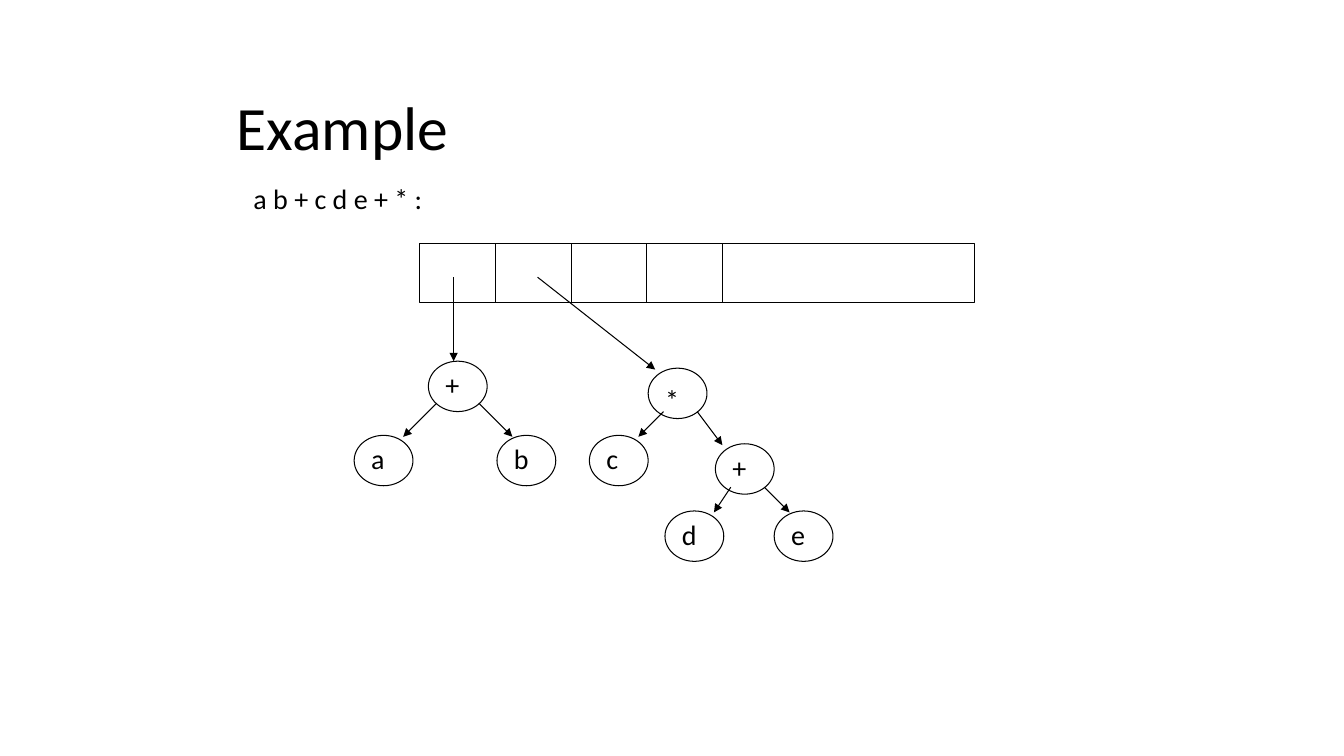
from pptx import Presentation
from pptx.util import Pt
from pptx.dml.color import RGBColor as RGB
from pptx.enum.shapes import MSO_SHAPE as Shape, MSO_CONNECTOR as Conn
from pptx.enum.text import MSO_ANCHOR as Anchor
from pptx.oxml.ns import qn
from lxml.etree import SubElement as Sub
from dataclasses import dataclass


@dataclass
class Theme:
    font: str = "Calibri"
    ink: RGB = RGB(0, 0, 0)
    title: int = 44
    body: int = 20
    line: float = 0.75


theme = Theme()
deck = Presentation()
deck.slide_width, deck.slide_height = Pt(960), Pt(540)
slide = deck.slides.add_slide(deck.slide_layouts[6])
shapes = slide.shapes


def write(text, left, top, wide, high, size=theme.body, wrap=False, anchor=Anchor.TOP, space=1.0):
    frame = shapes.add_textbox(Pt(left), Pt(top), Pt(wide), Pt(high)).text_frame
    frame.word_wrap = wrap
    frame.vertical_anchor = anchor
    para = frame.paragraphs[0]
    para.line_spacing = space
    run = para.add_run()
    run.text = text
    run.font.name = theme.font
    run.font.size = Pt(size)
    run.font.color.rgb = theme.ink


def link(start, end, arrow=True):
    line = shapes.add_connector(Conn.STRAIGHT, *map(Pt, start + end))
    line.line.color.rgb = theme.ink
    line.line.width = Pt(theme.line)
    if arrow:
        Sub(line.line._get_or_add_ln(), qn("a:tailEnd"), type="triangle")
    Sub(line._element.spPr, qn("a:effectLst"))


write("Example", 162, 48, 612, 90, size=theme.title, wrap=True, anchor=Anchor.MIDDLE, space=0.9)
write("a b + c d e + * :", 174, 126, 144, 31)

left, top, cell, high = 300, 174, 54, 42
nodes = [
    ("+", 306, 258), ("a", 253, 311), ("b", 355, 311),
    ("*", 463, 263), ("c", 421, 311), ("+", 511, 317),
    ("d", 475, 365), ("e", 553, 365),
]
outlines = [(Shape.RECTANGLE, left, top, 396, high)]
outlines += [(Shape.OVAL, x, y, 42, 36) for _, x, y in nodes]
for kind, *box in outlines:
    shape = shapes.add_shape(kind, *map(Pt, box))
    shape.shadow.inherit = False
    shape.fill.background()
    shape.line.color.rgb = theme.ink
    shape.line.width = Pt(theme.line)

for i in range(1, 5):
    x = left + i * cell
    link((x, top), (x, top + high), arrow=False)

for text, x, y in nodes:
    drop = 7 if text == "*" else 1
    write(text, x + 5, y + drop, 25, 31)

arrows = [
    ((324, 198), (324, 258)), ((384, 198), (468, 264)),
    ((312, 288), (288, 312)), ((342, 288), (366, 312)),
    ((474, 294), (456, 312)), ((498, 294), (516, 318)),
    ((522, 348), (510, 366)), ((546, 348), (564, 366)),
]
for start, end in arrows:
    link(start, end)

deck.save("out.pptx")
